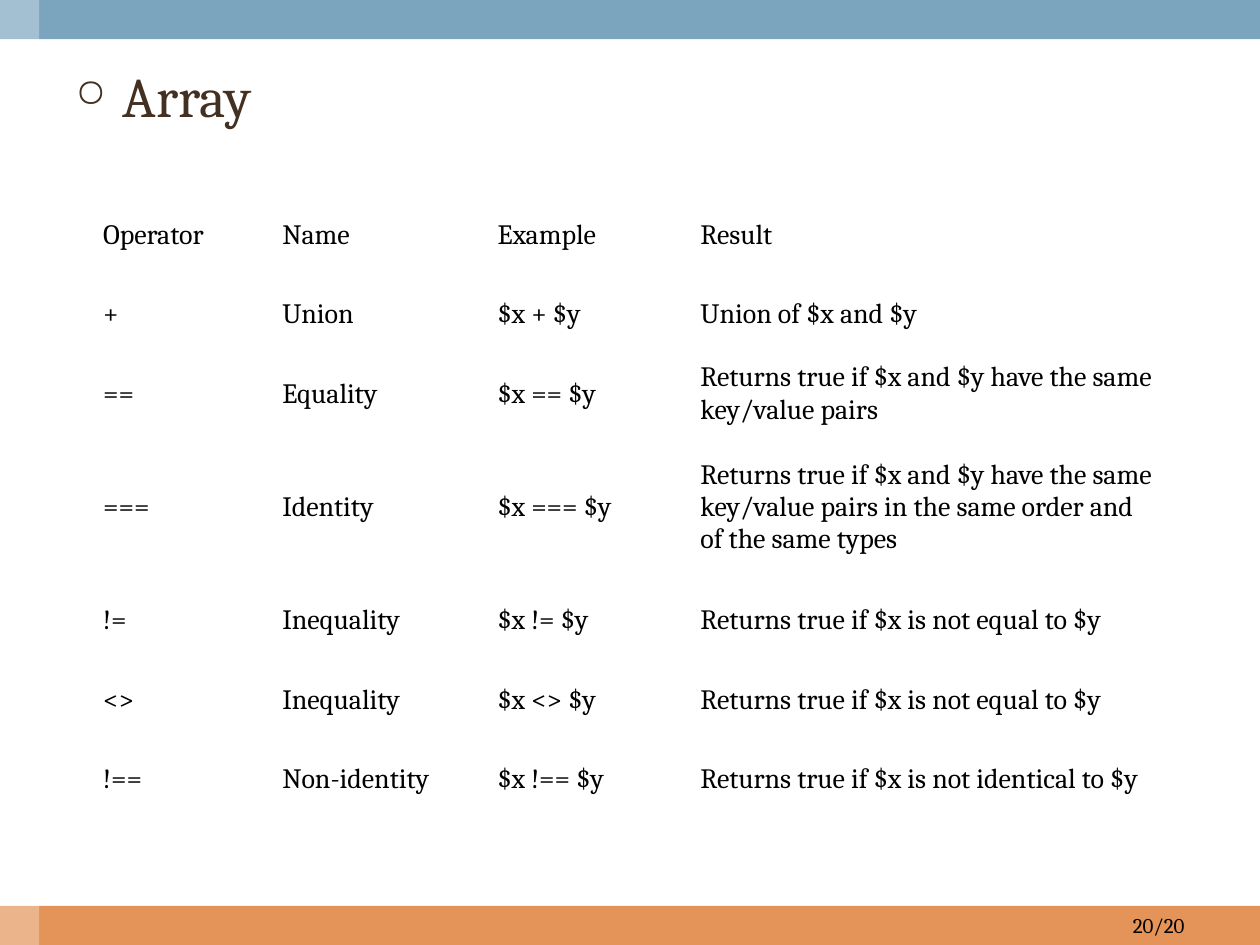
import pptx
import pptx.dml.color
import pptx.enum.shapes
import pptx.enum.text
import pptx.oxml
import pptx.oxml.ns
import pptx.util
import lxml.etree

Cm = pptx.util.Cm
Pt = pptx.util.Pt
ANCHOR = pptx.enum.text.MSO_ANCHOR
ALIGN = pptx.enum.text.PP_ALIGN

SLIDE_WIDTH, SLIDE_HEIGHT, BAND = 25.4, 19.05, 0.79
CELL_FORMAT = {
    "vertical_anchor": ANCHOR.MIDDLE,
    "margin_left": Cm(0.23), "margin_right": Cm(0.23),
    "margin_top": Cm(0.11), "margin_bottom": Cm(0.11),
}
OPERATORS = [
    ("Operator", "Name", "Example", "Result"),
    ("+", "Union", "$x + $y", "Union of $x and $y"),
    ("==", "Equality", "$x == $y",
     "Returns true if $x and $y have the same key/value pairs"),
    ("===", "Identity", "$x === $y",
     "Returns true if $x and $y have the same key/value pairs "
     "in the same order and of the same types"),
    ("!=", "Inequality", "$x != $y", "Returns true if $x is not equal to $y"),
    ("<>", "Inequality", "$x <> $y", "Returns true if $x is not equal to $y"),
    ("!==", "Non-identity", "$x !== $y",
     "Returns true if $x is not identical to $y"),
]


def rgb(hex_colour):
    return pptx.dml.color.RGBColor.from_string(hex_colour)


def apply_format(target, values):
    for name, value in values.items():
        setattr(target, name, value)


def write(paragraph, words, size, colour="000000"):
    run = paragraph.add_run()
    run.text = words
    apply_format(run.font, {"name": "Cambria", "size": Pt(size), "bold": False})
    run.font.color.rgb = rgb(colour)


def add_band(slide, box, colour, opacity=100):
    band = slide.shapes.add_shape(
        pptx.enum.shapes.MSO_SHAPE.RECTANGLE, *map(Cm, box))
    band.shadow.inherit = False
    band.line.fill.background()
    band.fill.solid()
    band.fill.fore_color.rgb = rgb(colour)
    if opacity < 100:
        tint = band.fill._xPr.find(".//" + pptx.oxml.ns.qn("a:srgbClr"))
        lxml.etree.SubElement(tint, pptx.oxml.ns.qn("a:alpha"),
                              val=str(opacity * 1000))


def add_frame(slide, box, anchor):
    frame = slide.shapes.add_textbox(*map(Cm, box)).text_frame
    apply_format(frame, {"word_wrap": True, "vertical_anchor": anchor})
    return frame


def add_bands(slide, left, top, width, height):
    add_band(slide, (left, top + height - BAND, width, BAND), "E49458")
    add_band(slide, (left, top, width, BAND), "7BA5BE")
    # Pale strip over the left end of both bands
    add_band(slide, (left, top, BAND, height), "FFFFFF", opacity=30)


def add_heading(slide, *box):
    heading = add_frame(slide, box, ANCHOR.TOP).paragraphs[0]
    write(heading, "Array", 32, "433021")
    # Hanging round bullet
    properties = heading._p.get_or_add_pPr()
    properties.set("marL", str(Cm(0.95)))
    properties.set("indent", str(-Cm(0.95)))
    namespace = pptx.oxml.ns.nsdecls("a")
    for markup in (
        f'<a:spcBef {namespace}><a:spcPct val="20000"/></a:spcBef>',
        f'<a:buSzPct {namespace} val="70000"/>',
        f'<a:buChar {namespace} char="○"/>',
    ):
        properties.append(pptx.oxml.parse_xml(markup))


def add_page_number(slide, *box):
    page = add_frame(slide, box, ANCHOR.MIDDLE).paragraphs[0]
    page.alignment = ALIGN.RIGHT
    write(page, "20/20", 12)


def add_operator_table(slide, left, top, width, height):
    table = slide.shapes.add_table(
        len(OPERATORS), len(OPERATORS[0]),
        Cm(left), Cm(top), Cm(width), Cm(height)).table
    apply_format(table, {"first_row": False, "horz_banding": False})
    column_widths = [3.61, 4.34, 4.09]
    column_widths.append(width - sum(column_widths))
    for column, column_width in zip(table.columns, column_widths):
        column.width = Cm(column_width)
    # Equal rows, with the spare height given to the three-line row
    row_height = 1.6
    for row, operator in zip(table.rows, OPERATORS):
        row.height = Cm(row_height)
        for cell, words in zip(row.cells, operator):
            apply_format(cell, CELL_FORMAT)
            cell.fill.background()
            write(cell.text_frame.paragraphs[0], words, 16)
    table.rows[3].height = Cm(height - row_height * (len(OPERATORS) - 1))


def main():
    deck = pptx.Presentation()
    apply_format(deck, {"slide_width": Cm(SLIDE_WIDTH),
                        "slide_height": Cm(SLIDE_HEIGHT)})
    slide = deck.slides.add_slide(deck.slide_layouts[6])
    add_bands(slide, 0, 0, SLIDE_WIDTH, SLIDE_HEIGHT)
    add_heading(slide, 1.27, 1.12, 22.86, 15.9)
    add_page_number(slide, 18.21, SLIDE_HEIGHT - BAND, 5.92, BAND)
    add_operator_table(slide, 1.85, 3.94, 21.7, 12.57)
    deck.save("out.pptx")


if __name__ == "__main__":
    main()
